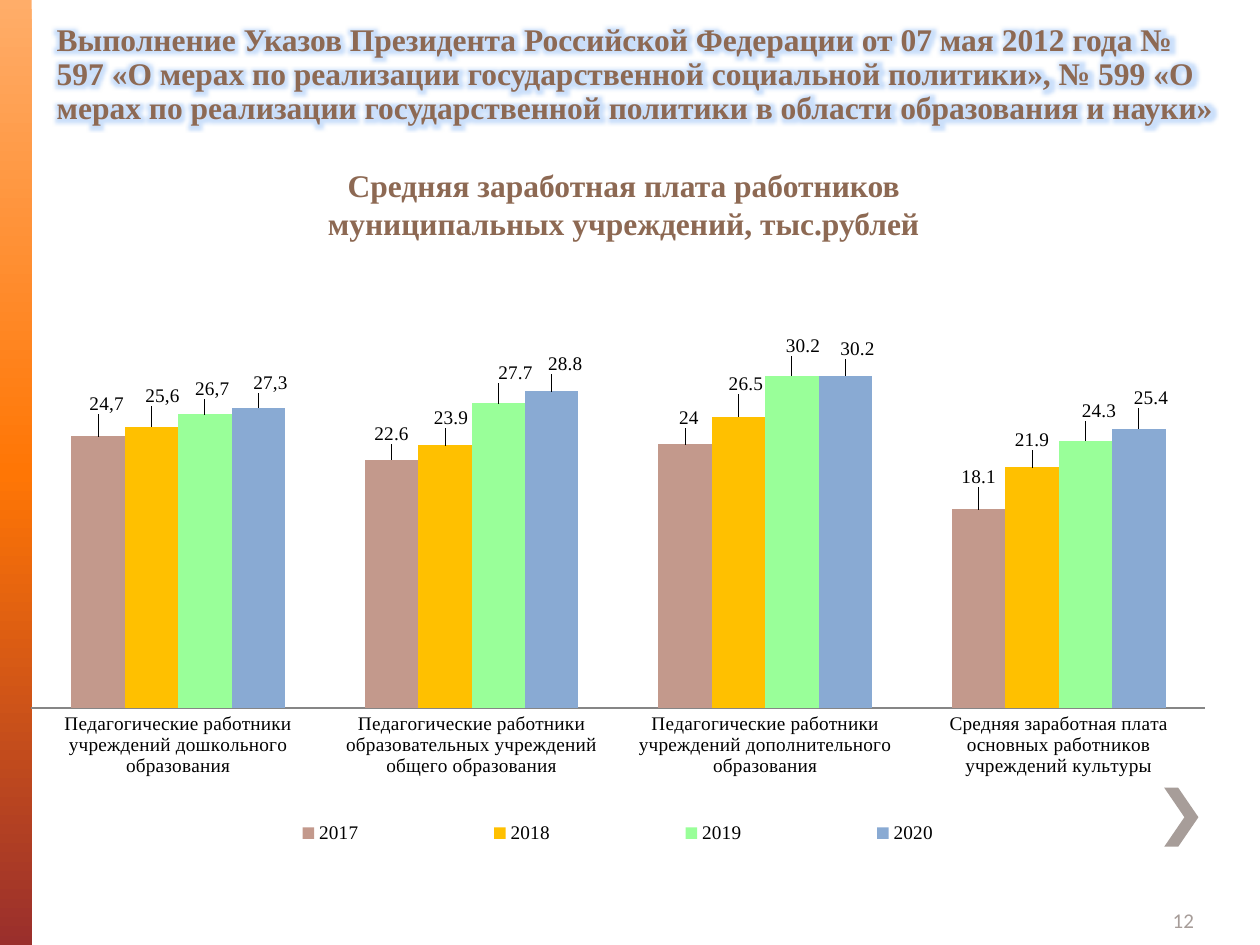
from dataclasses import dataclass

from pptx import Presentation
from pptx.chart.data import CategoryChartData
from pptx.dml.color import RGBColor
from pptx.enum.chart import XL_CHART_TYPE, XL_LABEL_POSITION, XL_LEGEND_POSITION, XL_TICK_MARK
from pptx.enum.shapes import MSO_SHAPE
from pptx.enum.text import MSO_ANCHOR, MSO_AUTO_SIZE, PP_ALIGN
from pptx.oxml import parse_xml
from pptx.oxml.ns import nsdecls
from pptx.util import Cm, Pt

SERIF = "Times New Roman"
BROWN = "8D6953"
GREY = "A79D99"
TITLE = (
    "Выполнение Указов Президента Российской Федерации от 07 мая 2012 года № 597 "
    "«О мерах по реализации государственной социальной политики», № 599 "
    "«О мерах по реализации государственной политики в области образования и науки»"
)
HEADS = ["Средняя заработная плата работников", "муниципальных учреждений, тыс.рублей"]
GROUPS = [
    "Педагогические работники учреждений дошкольного образования",
    "Педагогические работники образовательных учреждений общего образования",
    "Педагогические работники учреждений дополнительного образования",
    "Средняя заработная плата основных работников учреждений культуры",
]


@dataclass
class Box:
    left: float
    top: float
    width: float
    height: float

    def cm(self) -> tuple:
        return Cm(self.left), Cm(self.top), Cm(self.width), Cm(self.height)


@dataclass
class Year:
    name: str
    color: str
    pay: list
    shifts: list


YEARS = [
    Year("2017", "C3998C", [24.7, 22.6, 24, 18.1], [(0.7, -2.6), (0, -1.5), (0.3, -1.7), (0, -2.6)]),
    Year("2018", "FFC000", [25.6, 23.9, 26.5, 21.9], [(0.9, -2.3), (0.5, -1.8), (0.6, -2.6), (0, -1.8)]),
    Year("2019", "99FF99", [26.7, 27.7, 30.2, 24.3], [(0.6, -1.5), (1.4, -2.3), (0.9, -2.2), (1.1, -2.3)]),
    Year("2020", "89AAD3", [27.3, 28.8, 30.2, 25.4], [(1, -1.5), (1.1, -1.8), (1, -1.8), (1, -2.3)]),
]


def rgb(code: str) -> RGBColor:
    return RGBColor.from_string(code)


def style(font, name: str, size: float, color: str, bold: bool = False) -> None:
    font.name = name
    font.size = Pt(size)
    font.bold = bold
    font.color.rgb = rgb(color)


def layout(inner: bool = False, modes: bool = True, **parts: float):
    target = '<c:layoutTarget val="inner"/>' if inner else ""
    edges = '<c:xMode val="edge"/><c:yMode val="edge"/>' if modes else ""
    sizes = "".join(f'<c:{key} val="{part}"/>' for key, part in parts.items())
    return parse_xml(
        f'<c:layout {nsdecls("c")}><c:manualLayout>{target}{edges}{sizes}'
        "</c:manualLayout></c:layout>"
    )


def place(owner, node, after: str = "") -> None:
    for old in owner.xpath("c:layout"):
        owner.remove(old)
    if after:
        owner.xpath(after)[0].addnext(node)
    else:
        owner.insert(0, node)


def add_shape(slide, kind, box: Box, color: str):
    shape = slide.shapes.add_shape(kind, *box.cm())
    shape.shadow.inherit = False
    shape.fill.solid()
    shape.fill.fore_color.rgb = rgb(color)
    shape.line.fill.background()
    return shape


def add_band(slide) -> None:
    band = add_shape(slide, MSO_SHAPE.RECTANGLE, Box(0, 0, 0.64, 19.05), "FF7605")
    band.fill.gradient()
    band.fill.gradient_angle = 270
    stops = "".join(
        f'<a:gs pos="{pos * 1000}"><a:srgbClr val="{rgb(code)}"/></a:gs>'
        for pos, code in [(0, "FFAD69"), (50, "FF7605"), (100, "9A2F2C")]
    )
    old = band._element.spPr.xpath("a:gradFill/a:gsLst")[0]
    old.getparent().replace(old, parse_xml(f'<a:gsLst {nsdecls("a")}>{stops}</a:gsLst>'))


def add_title(slide) -> None:
    title = slide.shapes.title
    title.left, title.top, title.width, title.height = Box(0.89, 0.33, 24.03, 2.34).cm()
    frame = title.text_frame
    frame.text = TITLE
    frame.word_wrap = True
    frame.auto_size = MSO_AUTO_SIZE.NONE
    frame.vertical_anchor = MSO_ANCHOR.BOTTOM
    para = frame.paragraphs[0]
    para.alignment = PP_ALIGN.LEFT
    para.line_spacing = 0.9
    style(para.font, SERIF, 18, BROWN, True)
    para.runs[0]._r.get_or_add_rPr().append(parse_xml(
        f'<a:effectLst {nsdecls("a")}><a:glow rad="101600"><a:srgbClr val="{rgb("A9CBF8")}">'
        '<a:alpha val="60000"/></a:srgbClr></a:glow></a:effectLst>'
    ))


def add_text(slide, box: Box, lines: list, align, name: str, size: float, color: str, bold: bool):
    frame = slide.shapes.add_textbox(*box.cm()).text_frame
    frame.text = "\n".join(lines)
    for para in frame.paragraphs:
        para.alignment = align
        style(para.font, name, size, color, bold)
    return frame


def add_labels(series, year: Year) -> None:
    for num, (right, down) in enumerate(year.shifts):
        label = series.points[num].data_label
        if num == 0:
            label.text_frame.text = str(year.pay[0]).replace(".", ",")
            style(label.text_frame.paragraphs[0].font, SERIF, 11, "000000")
        else:
            style(label.font, SERIF, 11, "000000")
        label.position = XL_LABEL_POSITION.OUTSIDE_END
        node = series._element.xpath(f"c:dLbls/c:dLbl[c:idx/@val='{num}']")[0]
        place(node, layout(modes=False, x=right / 100, y=down / 100), "c:idx")


def add_pay(slide) -> None:
    data = CategoryChartData()
    data.categories = GROUPS
    for year in YEARS:
        data.add_series(year.name, year.pay)
    box = Box(0.51, 4.52, 24.89, 13.13)
    chart = slide.shapes.add_chart(XL_CHART_TYPE.COLUMN_CLUSTERED, *box.cm(), data).chart
    style(chart.font, SERIF, 11, "000000")
    chart.has_title = False
    chart.has_legend = True
    chart.legend.position = XL_LEGEND_POSITION.TOP
    chart.legend.include_in_layout = False
    place(chart.legend._element, layout(x=0.12, y=0.9, w=0.72, h=0.07), "c:legendPos")
    plot = chart.plots[0]
    plot.gap_width = 150
    plot.overlap = 0
    plot.vary_by_categories = False
    place(chart._chartSpace.xpath("c:chart/c:plotArea")[0],
          layout(inner=True, x=0.005, y=0.152, w=0.951, h=0.591))
    value = chart.value_axis
    value.minimum_scale, value.maximum_scale = 0, 35
    value.has_major_gridlines = False
    value.visible = False
    axis = chart.category_axis
    axis.major_tick_mark = XL_TICK_MARK.NONE
    axis.format.line.color.rgb = rgb("868686")
    axis.format.line.width = Pt(0.75)
    for series, year in zip(plot.series, YEARS):
        series.format.fill.solid()
        series.format.fill.fore_color.rgb = rgb(year.color)
        series.data_labels.show_value = True
        add_labels(series, year)


def main() -> None:
    deck = Presentation()
    deck.slide_width, deck.slide_height = Cm(25.4), Cm(19.05)
    slide = deck.slides.add_slide(deck.slide_layouts[5])
    add_band(slide)
    arrow = add_shape(slide, MSO_SHAPE.CHEVRON, Box(23.47, 15.88, 0.69, 1.19), GREY)
    arrow.adjustments[0] = 0.59
    add_title(slide)
    page = add_text(slide, Box(23.39, 18.06, 2.01, 0.99), ["12"], PP_ALIGN.LEFT, "Calibri", 12, GREY, False)
    page.vertical_anchor = MSO_ANCHOR.MIDDLE
    head = add_text(slide, Box(6.3, 3.23, 12.55, 1.8), HEADS, PP_ALIGN.CENTER, SERIF, 18, BROWN, True)
    head.word_wrap = False
    head.auto_size = MSO_AUTO_SIZE.SHAPE_TO_FIT_TEXT
    add_pay(slide)
    deck.save("out.pptx")


if __name__ == "__main__":
    main()
